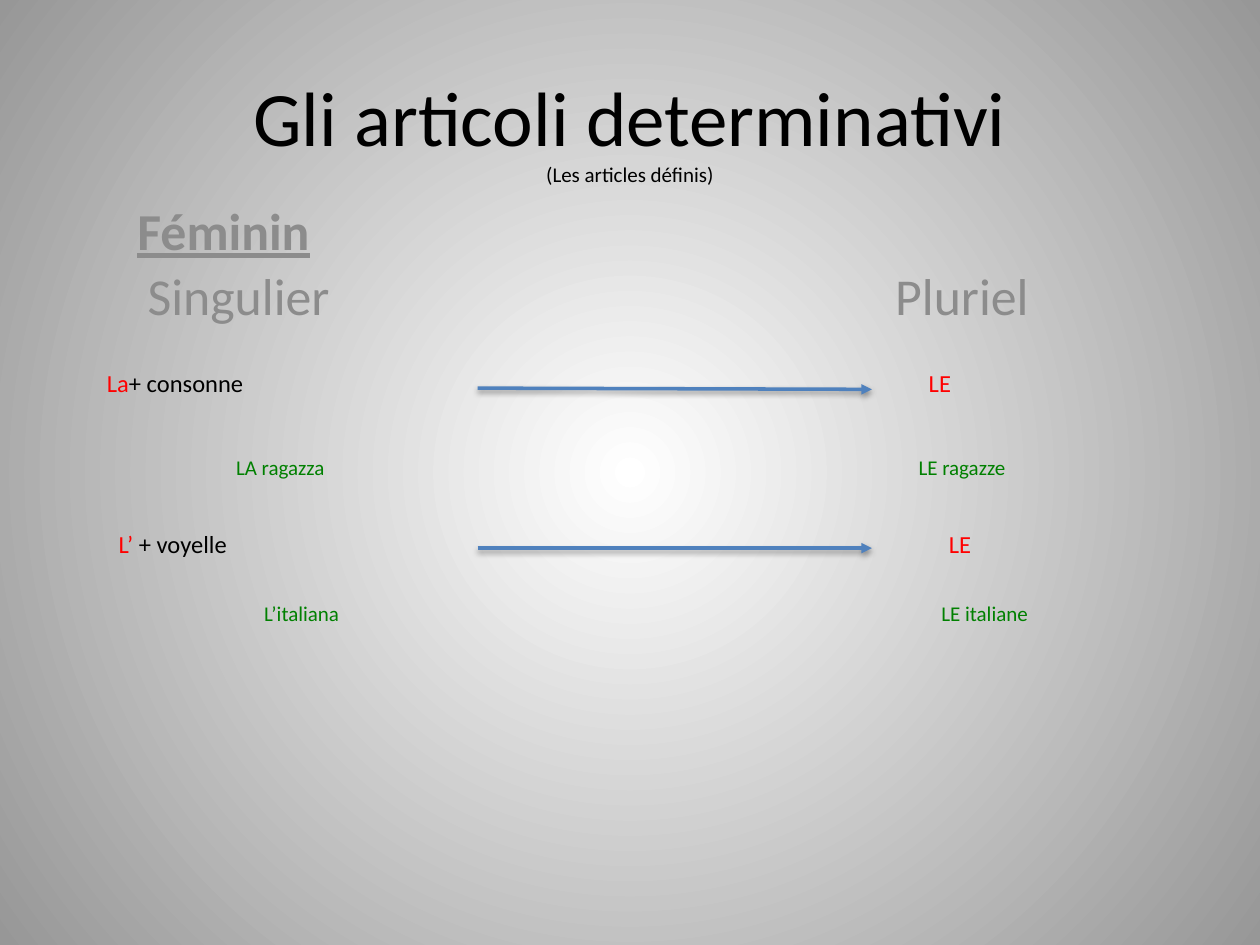
import pptx
import pptx.dml.color
import pptx.enum.shapes
import pptx.enum.text
import pptx.oxml
import pptx.oxml.ns
import pptx.util

Pt = pptx.util.Pt
RGBColor = pptx.dml.color.RGBColor
Align = pptx.enum.text.PP_ALIGN

WHITE = RGBColor(0xFF, 0xFF, 0xFF)
EDGE_GRAY = RGBColor(0x97, 0x97, 0x97)
HEADING_GRAY = RGBColor(0x8C, 0x8C, 0x8C)
BLACK = RGBColor(0, 0, 0)
RED = RGBColor(0xFF, 0, 0)
GREEN = RGBColor(0, 0x80, 0)
BLUE = RGBColor(0x4F, 0x81, 0xBD)

FONT = "Calibri"
HEADING_SIZE, RULE_SIZE, EXAMPLE_SIZE = 29.6, 14, 12
COLUMN_WIDTH, HEADING_HEIGHT, ROW_HEIGHT = 147.6, 41, 30.2
ARROW_LEFT, ARROW_RIGHT = 272.9, 498.2
NAMESPACE = pptx.oxml.ns.nsdecls("a")


def set_radial_background(slide):
    fill = slide.background.fill
    fill.gradient()
    for stop, color, position in zip(fill.gradient_stops, (WHITE, EDGE_GRAY), (0, 1)):
        stop.color.rgb = color
        stop.position = position
    linear = slide.element.find(".//" + pptx.oxml.ns.qn("a:lin"))
    radial = pptx.oxml.parse_xml(
        f'<a:path {NAMESPACE} path="circle">'
        '<a:fillToRect l="50000" t="50000" r="50000" b="50000"/></a:path>')
    linear.getparent().replace(linear, radial)


def add_run(paragraph, text, size, color, bold=False, underline=False):
    run = paragraph.add_run()
    run.text = text
    font = run.font
    font.name, font.size, font.color.rgb = FONT, Pt(size), color
    font.bold, font.underline = bold, underline


def add_text_box(slide, left, top, width, height, align=Align.CENTER):
    """Add an empty wrapping text box and return its first paragraph."""
    shape = slide.shapes.add_textbox(Pt(left), Pt(top), Pt(width), Pt(height))
    shape.text_frame.word_wrap = True
    paragraph = shape.text_frame.paragraphs[0]
    paragraph.alignment = align
    return paragraph


def add_title(slide):
    shape = slide.shapes.add_textbox(Pt(54), Pt(15.1), Pt(612), Pt(115.9))
    frame = shape.text_frame
    frame.word_wrap = True
    frame.vertical_anchor = pptx.enum.text.MSO_ANCHOR.MIDDLE
    paragraph = frame.paragraphs[0]
    paragraph.alignment = Align.CENTER
    add_run(paragraph, "Gli articoli determinativi", 44, BLACK)
    paragraph.add_line_break()
    add_run(paragraph, "(Les articles définis)", 12, BLACK)


def add_headings(slide):
    gender = add_text_box(slide, 54, 110.2, COLUMN_WIDTH, HEADING_HEIGHT)
    add_run(gender, "Féminin", HEADING_SIZE, HEADING_GRAY, bold=True, underline=True)
    for text, left in (("Singulier", 62.6), ("Pluriel", 475.9)):
        number = add_text_box(slide, left, 151.2, COLUMN_WIDTH, HEADING_HEIGHT)
        number.line_spacing = 0.9
        add_run(number, text, HEADING_SIZE, HEADING_GRAY)


def add_rule(slide, article, condition, left, width, top, plural_left, align):
    """Add the singular article with its condition, and the plural article."""
    singular = add_text_box(slide, left, top, width, ROW_HEIGHT, align)
    add_run(singular, article, RULE_SIZE, RED)
    add_run(singular, condition, RULE_SIZE, BLACK)
    plural = add_text_box(slide, plural_left, top, 50.4, ROW_HEIGHT)
    add_run(plural, "LE", RULE_SIZE, RED)


def add_example(slide, text, left, top):
    paragraph = add_text_box(slide, left, top, COLUMN_WIDTH, ROW_HEIGHT)
    add_run(paragraph, text, EXAMPLE_SIZE, GREEN)


def add_arrow(slide, start_y, end_y):
    arrow = slide.shapes.add_connector(
        pptx.enum.shapes.MSO_CONNECTOR.STRAIGHT,
        Pt(ARROW_LEFT), Pt(start_y), Pt(ARROW_RIGHT), Pt(end_y))
    arrow.line.color.rgb = BLUE
    arrow.line.width = Pt(2)
    properties = arrow.element.spPr
    properties.find(pptx.oxml.ns.qn("a:ln")).append(
        pptx.oxml.parse_xml(f'<a:tailEnd {NAMESPACE} type="triangle"/>'))
    properties.append(pptx.oxml.parse_xml(
        f'<a:effectLst {NAMESPACE}><a:outerShdw blurRad="{Pt(3.1)}" dist="{Pt(1.6)}" '
        'dir="5400000" rotWithShape="0"><a:srgbClr val="000000">'
        '<a:alpha val="38000"/></a:srgbClr></a:outerShdw></a:effectLst>'))


def main():
    presentation = pptx.Presentation()
    presentation.slide_width, presentation.slide_height = Pt(720), Pt(540)
    slide = presentation.slides.add_slide(presentation.slide_layouts[6])
    set_radial_background(slide)
    add_headings(slide)

    add_rule(slide, "La", "+ consonne", 54, 141.1, 206.6, 511.9, Align.LEFT)
    add_arrow(slide, 221.8, 222.5)
    add_example(slide, "LA ragazza", 86.4, 256.3)
    add_example(slide, "LE ragazze", 475.9, 256.3)

    add_rule(slide, "L’ ", "+ voyelle", 23.8, 149.8, 298.8, 523.4, Align.CENTER)
    add_arrow(slide, 313.2, 313.2)
    add_example(slide, "L’italiana", 98.6, 339.8)
    add_example(slide, "LE italiane", 488.9, 339.8)

    add_title(slide)
    presentation.save("out.pptx")


if __name__ == "__main__":
    main()
